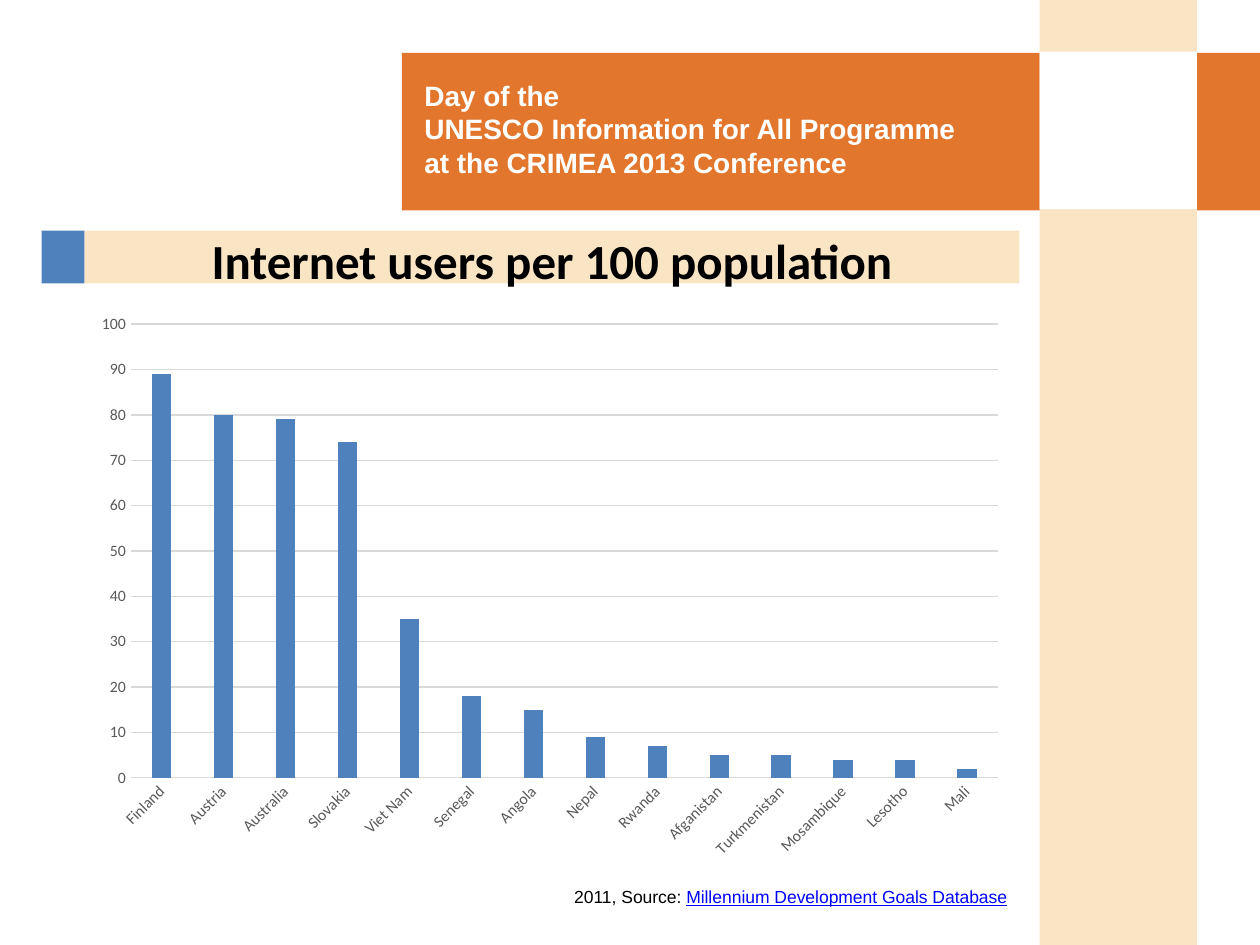
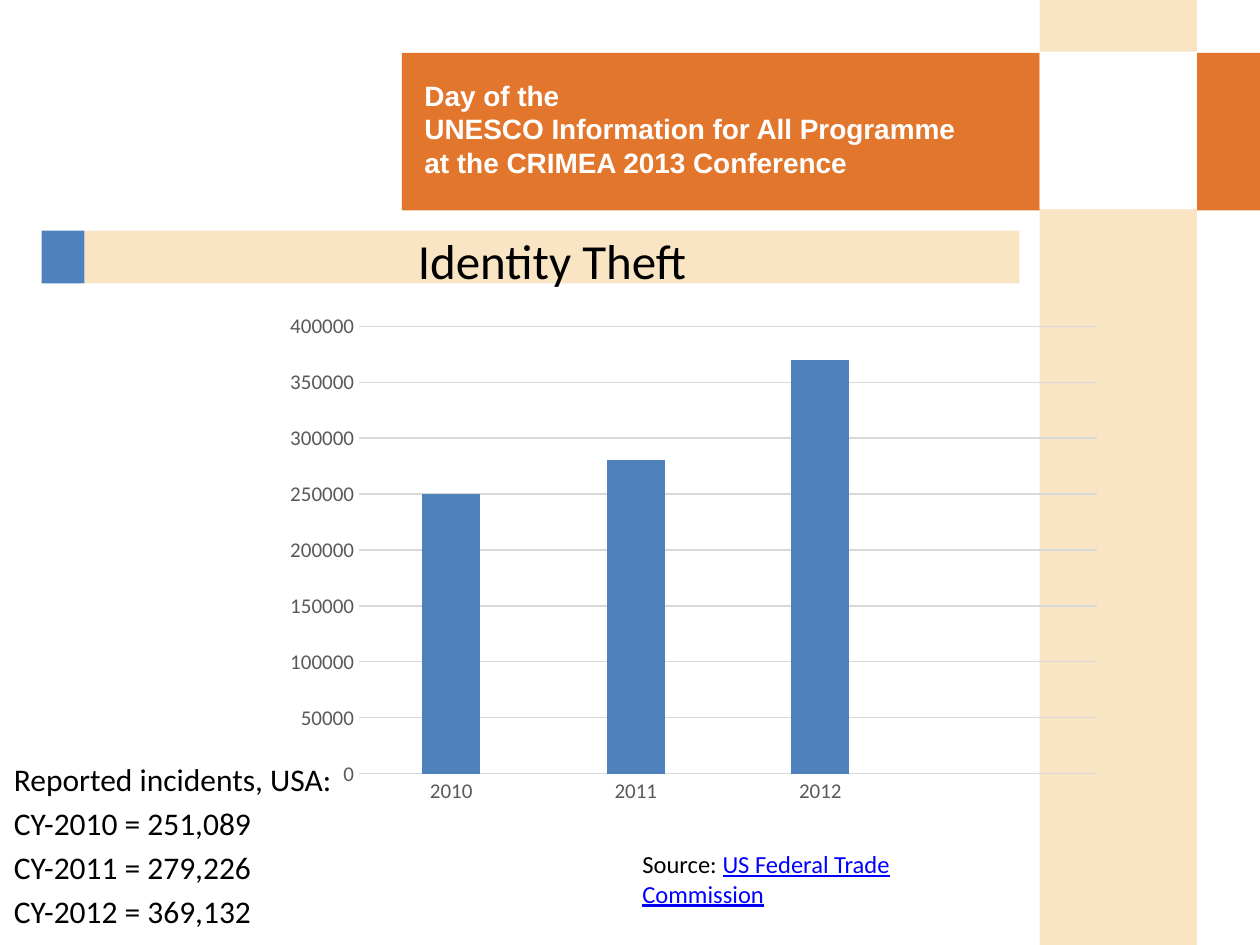
from pptx import Presentation
from pptx.chart.data import CategoryChartData
from pptx.dml.color import RGBColor
from pptx.enum.chart import XL_CHART_TYPE, XL_TICK_MARK
from pptx.enum.shapes import MSO_SHAPE
from pptx.enum.text import MSO_ANCHOR, MSO_AUTO_SIZE, PP_ALIGN
from pptx.oxml.ns import qn
from pptx.util import Inches, Pt

RECTANGLE = MSO_SHAPE.RECTANGLE
COLUMNS = XL_CHART_TYPE.COLUMN_CLUSTERED
NO_TICK = XL_TICK_MARK.NONE
TOP = MSO_ANCHOR.TOP
NO_FIT = MSO_AUTO_SIZE.NONE
LEFT, CENTER, RIGHT = PP_ALIGN.LEFT, PP_ALIGN.CENTER, PP_ALIGN.RIGHT

ORANGE, CREAM, BLUE = "E3762D", "F9E4C3", "4F81BD"
WHITE, BLACK, LINK = "FFFFFF", "000000", "0000FF"
LABEL_GREY, GRID_GREY = "595959", "D9D9D9"
TITLE_ONLY, TITLE_AND_BODY = 5, 1


def rgb(code):
    return RGBColor.from_string(code)


def add_span(para, text, face, size, color=BLACK, bold=False, underline=False):
    span = para.add_run()
    span.text = text
    span.font.name = face
    span.font.size = Pt(size)
    span.font.color.rgb = rgb(color)
    span.font.bold = bold
    span.font.underline = underline


deck = Presentation()
deck.slide_width, deck.slide_height = Inches(10), Inches(7.5)

users = {
    "Finland": 89, "Austria": 80, "Australia": 79, "Slovakia": 74,
    "Viet Nam": 35, "Senegal": 18, "Angola": 15, "Nepal": 9, "Rwanda": 7,
    "Afganistan": 5, "Turkmenistan": 5, "Mosambique": 4, "Lesotho": 4, "Mali": 2,
}
slides = [
    {
        "layout": TITLE_ONLY, "title": "Internet users per 100 population", "bold": True,
        "data": users, "chart_at": (0.66, 2.41, 7.41, 4.49),
        "axis_top": 100, "axis_step": 10, "label_size": 9, "label_turn": -45,
        "source": ("2011, Source: ", "Millennium Development Goals Database"),
        "source_at": (4.06, 6.98, 4.03, 0.27), "source_font": ("Arial", 10),
        "source_align": RIGHT, "list": [],
    },
    {
        "layout": TITLE_AND_BODY, "title": "Identity Theft", "bold": False,
        "data": {"2010": 250000, "2011": 280000, "2012": 370000, "": None},
        "chart_at": (2.17, 2.41, 6.67, 4.05),
        "axis_top": 400000, "axis_step": 50000, "label_size": 12, "label_turn": 0,
        "source": ("Source: ", "US Federal Trade Commission"),
        "source_at": (5, 6.69, 3.15, 0.34), "source_font": ("Calibri", 14),
        "source_align": LEFT,
        "list": [
            "Reported incidents, USA:",
            "CY-2010 = 251,089",
            "CY-2011 = 279,226",
            "CY-2012 = 369,132",
        ],
    },
]
pages = [deck.slides.add_slide(deck.slide_layouts[content["layout"]]) for content in slides]

# Bands and conference name, drawn once and moved to the slide master
bands = [
    (ORANGE, 3.19, 0.42, 6.81, 1.25),
    (CREAM, 0.67, 1.83, 7.42, 0.42),
    (CREAM, 8.25, 0, 1.25, 7.5),
    (BLUE, 0.33, 1.83, 0.34, 0.42),
    (WHITE, 8.25, 0.41, 1.25, 1.25),
]
master_shapes = []
for color, *place in bands:
    band = pages[0].shapes.add_shape(RECTANGLE, *map(Inches, place))
    band.shadow.inherit = False
    band.fill.solid()
    band.fill.fore_color.rgb = rgb(color)
    band.line.fill.background()
    master_shapes.append(band)

conference = pages[0].shapes.add_textbox(Inches(3.27), Inches(0.57), Inches(4.65), Inches(0.91))
conference.text_frame.word_wrap = True
para = conference.text_frame.paragraphs[0]
lines = ["Day of the", "UNESCO Information for All Programme", "at the CRIMEA 2013 Conference"]
for index, line in enumerate(lines):
    if index:
        para.add_line_break()
    add_span(para, line, "Arial", 16, WHITE, bold=True)
master_shapes.append(conference)

for number, shape in enumerate(master_shapes, start=100):
    shape.element.nvSpPr.cNvPr.set("id", str(number))
    deck.slide_master.shapes.element.append(shape.element)

for page, content in zip(pages, slides):
    title = page.shapes.title
    title.left, title.top, title.width, title.height = map(Inches, (0.67, 1.78, 7.42, 0.47))
    title.text_frame.auto_size = NO_FIT
    title.text_frame.vertical_anchor = TOP
    para = title.text_frame.paragraphs[0]
    para.alignment = CENTER
    add_span(para, content["title"], "Calibri", 28, bold=content["bold"])

    if content["list"]:
        body = page.placeholders[1]
        body.left, body.top, body.width, body.height = map(Inches, (0.01, 5.98, 3.39, 0.71))
        body.text_frame.auto_size = NO_FIT
        for index, line in enumerate(content["list"]):
            para = body.text_frame.add_paragraph() if index else body.text_frame.paragraphs[0]
            properties = para._p.get_or_add_pPr()
            properties.set("marL", "0")
            properties.set("indent", "0")
            properties.append(properties.makeelement(qn("a:buNone"), {}))
            para.space_before = Pt(3.6 if index else 0)
            add_span(para, line, "Calibri", 18)

    chart_data = CategoryChartData()
    chart_data.categories = list(content["data"])
    chart_data.add_series("Series 1", list(content["data"].values()))
    chart = page.shapes.add_chart(COLUMNS, *map(Inches, content["chart_at"]), chart_data).chart
    chart.has_legend = False
    chart.has_title = False
    chart.font.name = "Calibri"
    chart.font.size = Pt(10)
    chart.font.color.rgb = rgb(BLACK)

    plot = chart.plots[0]
    plot.gap_width = 219
    plot.overlap = -27
    plot.vary_by_categories = False
    series = plot.series[0]
    series.format.fill.solid()
    series.format.fill.fore_color.rgb = rgb(BLUE)

    countries_or_years, scale = chart.category_axis, chart.value_axis
    for axis in (countries_or_years, scale):
        axis.major_tick_mark = axis.minor_tick_mark = NO_TICK
        axis.tick_labels.font.name = "Calibri"
        axis.tick_labels.font.size = Pt(content["label_size"])
        axis.tick_labels.font.color.rgb = rgb(LABEL_GREY)
    scale.minimum_scale = 0
    scale.maximum_scale = content["axis_top"]
    scale.major_unit = content["axis_step"]
    scale.has_major_gridlines = True
    scale.format.line.fill.background()
    for line in (countries_or_years.format.line, scale.major_gridlines.format.line):
        line.color.rgb = rgb(GRID_GREY)
        line.width = Pt(0.75)
    label_body = chart.element.xpath(".//c:catAx/c:txPr/a:bodyPr")[0]
    label_body.set("rot", str(content["label_turn"] * 60000))

    source = page.shapes.add_textbox(*map(Inches, content["source_at"]))
    source.text_frame.word_wrap = True
    para = source.text_frame.paragraphs[0]
    para.alignment = content["source_align"]
    lead, database = content["source"]
    add_span(para, lead, *content["source_font"])
    add_span(para, database, *content["source_font"], LINK, underline=True)

deck.save("out.pptx")
